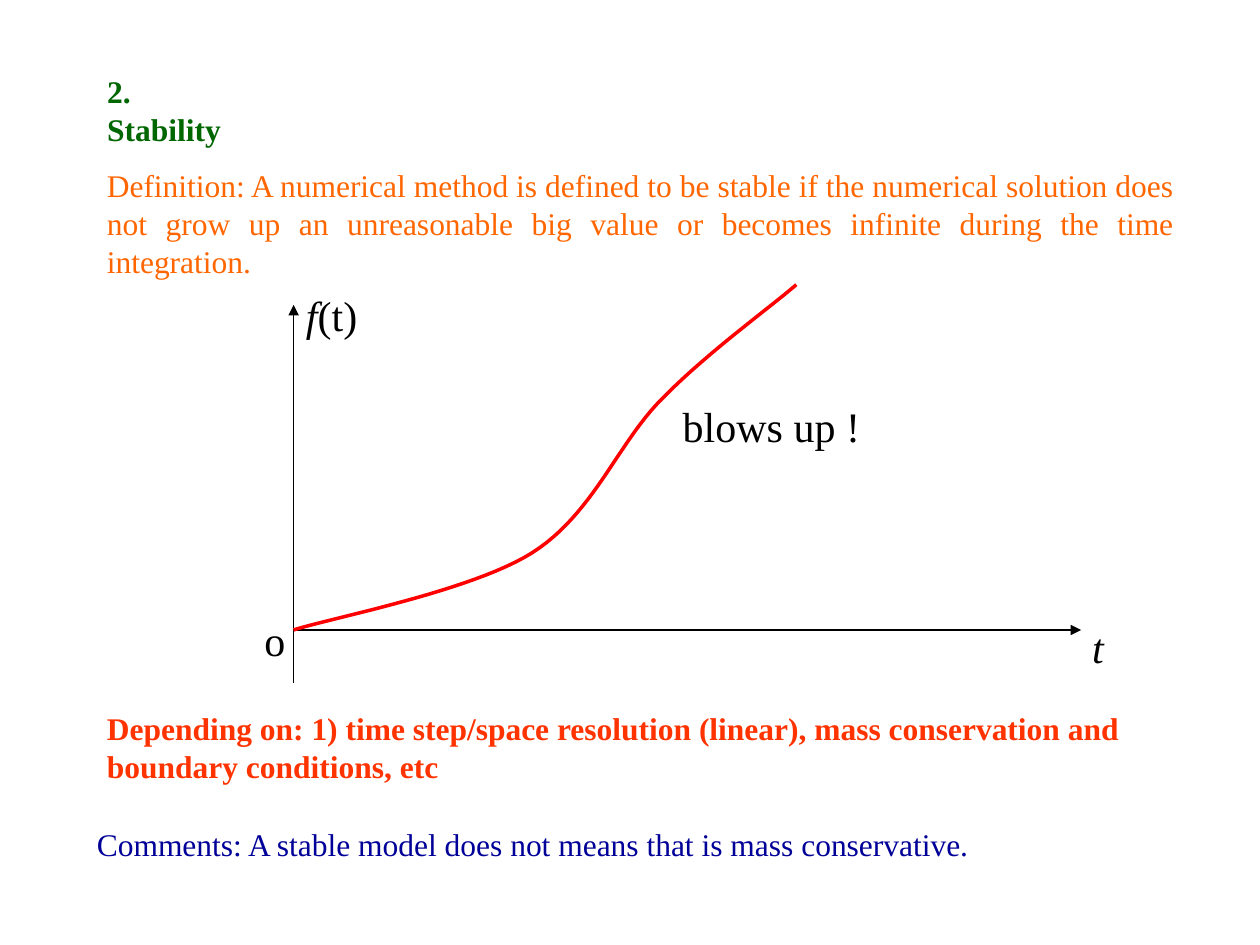
import pptx
import pptx.util
import pptx.dml.color
import pptx.enum.shapes
import pptx.enum.text
import pptx.oxml
import pptx.oxml.ns

Inches = pptx.util.Inches
Pt = pptx.util.Pt
RGBColor = pptx.dml.color.RGBColor
Align = pptx.enum.text.PP_ALIGN
Anchor = pptx.enum.text.MSO_ANCHOR

FONT = "Times New Roman"
BLACK = RGBColor(0x00, 0x00, 0x00)
GREEN = RGBColor(0x00, 0x66, 0x00)
ORANGE = RGBColor(0xFF, 0x66, 0x00)
RED = RGBColor(0xFF, 0x00, 0x00)
VERMILION = RGBColor(0xFF, 0x33, 0x00)
NAVY = RGBColor(0x00, 0x00, 0x99)

ORIGIN = (2.33, 5)
GROWTH_CURVE = [
    [ORIGIN, (2.65, 4.9), (3.74, 4.69), (4.22, 4.39)],
    [(4.22, 4.39), (4.71, 4.08), (4.9, 3.52), (5.25, 3.17)],
    [(5.25, 3.17), (5.6, 2.81), (6.1, 2.45), (6.32, 2.26)],
]
STEPS = 24


def write_text(shape, runs, size, color, bold=False, wrap=True,
               align=Align.LEFT, anchor=Anchor.TOP):
    frame = shape.text_frame
    frame.word_wrap = wrap
    frame.auto_size = pptx.enum.text.MSO_AUTO_SIZE.SHAPE_TO_FIT_TEXT
    frame.vertical_anchor = anchor
    paragraph = frame.paragraphs[0]
    paragraph.alignment = align
    for text, italic in runs:
        run = paragraph.add_run()
        run.text = text
        run.font.name = FONT
        run.font.size = Pt(size)
        run.font.color.rgb = color
        run.font.bold = bold
        run.font.italic = italic


def add_title(slide, text, left, top, width, height):
    title = slide.shapes.title
    title.left, title.top = Inches(left), Inches(top)
    title.width, title.height = Inches(width), Inches(height)
    write_text(title, [(text, False)], 18, GREEN, bold=True, wrap=False,
               anchor=Anchor.MIDDLE)


def add_text(slide, box, runs, size, color, **options):
    shape = slide.shapes.add_textbox(*map(Inches, box))
    write_text(shape, runs, size, color, **options)


def add_axis(slide, start, end):
    axis = slide.shapes.add_connector(
        pptx.enum.shapes.MSO_CONNECTOR.STRAIGHT, *map(Inches, start + end))
    axis.line.color.rgb = BLACK
    axis.line.width = Pt(0.75)
    qn = pptx.oxml.ns.qn
    arrowhead = axis.line._get_or_add_ln().makeelement(
        qn("a:tailEnd"), {"type": "triangle"})
    axis.line._get_or_add_ln().append(arrowhead)
    properties = axis._element.spPr
    properties.append(properties.makeelement(qn("a:effectLst"), {}))


def bezier_point(controls, t):
    weights = ((1 - t) ** 3, 3 * t * (1 - t) ** 2, 3 * t ** 2 * (1 - t), t ** 3)
    return tuple(Inches(sum(weight * value for weight, value in zip(weights, values)))
                 for values in zip(*controls))


def add_curve(slide, segments):
    points = [bezier_point(controls, step / STEPS)
              for controls in segments for step in range(1, STEPS + 1)]
    start_x, start_y = map(Inches, segments[0][0])
    builder = slide.shapes.build_freeform(start_x, start_y)
    builder.add_line_segments(points, close=False)
    curve = builder.convert_to_shape()
    curve.shadow.inherit = False
    curve.fill.background()
    curve.line.color.rgb = RED
    curve.line.width = Pt(2)


def main():
    presentation = pptx.Presentation()
    presentation.slide_width = Inches(10)
    presentation.slide_height = Inches(7.5)
    slide = presentation.slides.add_slide(presentation.slide_layouts[5])

    add_title(slide, "2. Stability", 0.75, 0.67, 1.35, 0.4)
    definition = ("Definition: A numerical method is defined to be stable if the "
                  "numerical solution does not grow up an unreasonable big value or "
                  "becomes infinite during the time integration.")
    add_text(slide, (0.75, 1.27, 8.67, 1), [(definition, False)], 18, ORANGE,
             align=Align.JUSTIFY, anchor=Anchor.MIDDLE)

    add_axis(slide, (2.33, 5.42), (2.33, 2.42))
    add_axis(slide, ORIGIN, (8.58, 5))
    add_curve(slide, GROWTH_CURVE)

    labels = [
        ((2.33, 2.25, 0.61, 0.5), [("f", True), ("(t)", False)]),
        ((8.57, 4.88, 0.29, 0.5), [("t", True)]),
        ((2, 4.83, 0.37, 0.5), [("o", False)]),
        ((5.32, 3.13, 1.61, 0.5), [("blows up !", False)]),
    ]
    for box, runs in labels:
        add_text(slide, box, runs, 24, BLACK, wrap=False)

    comment = "Comments: A stable model does not means that is mass conservative."
    add_text(slide, (0.67, 6.5, 8.52, 0.4), [(comment, False)], 18, NAVY)
    dependence = ("Depending on: 1) time step/space resolution (linear), mass "
                  "conservation and boundary conditions, etc")
    add_text(slide, (0.75, 5.58, 8.68, 0.7), [(dependence, False)], 18, VERMILION,
             bold=True)

    presentation.save("out.pptx")


if __name__ == "__main__":
    main()
